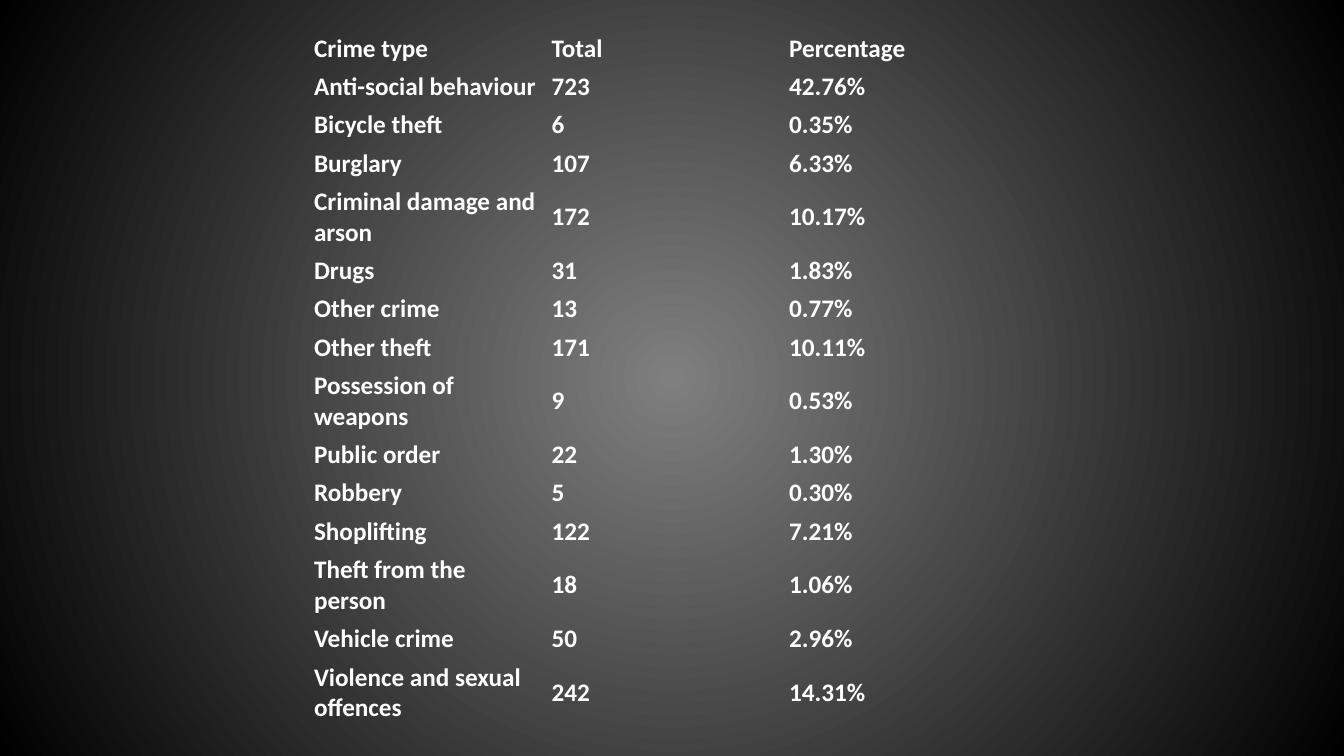
import lxml.etree
import pptx
import pptx.dml.color
import pptx.enum.text
import pptx.oxml.ns
import pptx.util

Inches = pptx.util.Inches
RGBColor = pptx.dml.color.RGBColor
qn = pptx.oxml.ns.qn

WHITE = RGBColor(0xFF, 0xFF, 0xFF)
GRAY = RGBColor(0x7F, 0x7F, 0x7F)
BLACK = RGBColor(0x00, 0x00, 0x00)
NO_STYLE_NO_GRID = "{2D5ABB26-0587-4C30-8999-92F81FD0307C}"
SIDE_MARGIN = Inches(0.15) // 2
TOP_MARGIN = SIDE_MARGIN // 2

CRIME_ROWS = [
    ("Crime type", "Total", "Percentage"),
    ("Anti-social behaviour", "723", "42.76%"),
    ("Bicycle theft", "6", "0.35%"),
    ("Burglary", "107", "6.33%"),
    ("Criminal damage and arson", "172", "10.17%"),
    ("Drugs", "31", "1.83%"),
    ("Other crime", "13", "0.77%"),
    ("Other theft", "171", "10.11%"),
    ("Possession of weapons", "9", "0.53%"),
    ("Public order", "22", "1.30%"),
    ("Robbery", "5", "0.30%"),
    ("Shoplifting", "122", "7.21%"),
    ("Theft from the person", "18", "1.06%"),
    ("Vehicle crime", "50", "2.96%"),
    ("Violence and sexual offences", "242", "14.31%"),
]


def set_radial_background(slide, center_color, edge_color):
    fill = slide.background.fill
    fill.gradient()
    for stop, color, position in zip(
        fill.gradient_stops, (center_color, edge_color), (0, 1)
    ):
        stop.color.rgb = color
        stop.position = position
    gradient = slide.element.find(".//" + qn("a:gradFill"))
    linear = gradient.find(qn("a:lin"))
    circle = lxml.etree.Element(qn("a:path"))
    circle.set("path", "circle")
    focus = lxml.etree.SubElement(circle, qn("a:fillToRect"))
    for side in "ltrb":
        focus.set(side, "50000")
    gradient.replace(linear, circle)


def write_text(text_frame, text, size=18, color=WHITE, bold=True, font="Calibri"):
    run = text_frame.paragraphs[0].add_run()
    run.text = text
    run.font.size = pptx.util.Pt(size)
    run.font.bold = bold
    run.font.name = font
    run.font.color.rgb = color


def add_crime_table(slide, left, top, width, height):
    """Add the table; the last row takes the height left by the others."""
    row_count, column_count = len(CRIME_ROWS), len(CRIME_ROWS[0])
    table = slide.shapes.add_table(
        row_count, column_count, left, top, width, height
    ).table
    table.first_row = False
    table.horz_banding = False
    table._tbl.find(".//" + qn("a:tableStyleId")).text = NO_STYLE_NO_GRID

    row_height = Inches(0.31)
    for row in table.rows:
        row.height = row_height
    table.rows[row_count - 1].height = height - row_height * (row_count - 1)

    for row, values in zip(table.rows, CRIME_ROWS):
        for cell, value in zip(row.cells, values):
            cell.fill.background()
            cell.vertical_anchor = pptx.enum.text.MSO_ANCHOR.MIDDLE
            cell.margin_left = cell.margin_right = SIDE_MARGIN
            cell.margin_top = cell.margin_bottom = TOP_MARGIN
            write_text(cell.text_frame, value)


def main():
    presentation = pptx.Presentation()
    presentation.slide_width = Inches(13.33)
    presentation.slide_height = Inches(7.5)
    slide = presentation.slides.add_slide(presentation.slide_layouts[6])
    set_radial_background(slide, GRAY, BLACK)
    add_crime_table(slide, Inches(3.04), Inches(0.29), Inches(7.07), Inches(4.89))
    presentation.save("out.pptx")


if __name__ == "__main__":
    main()
